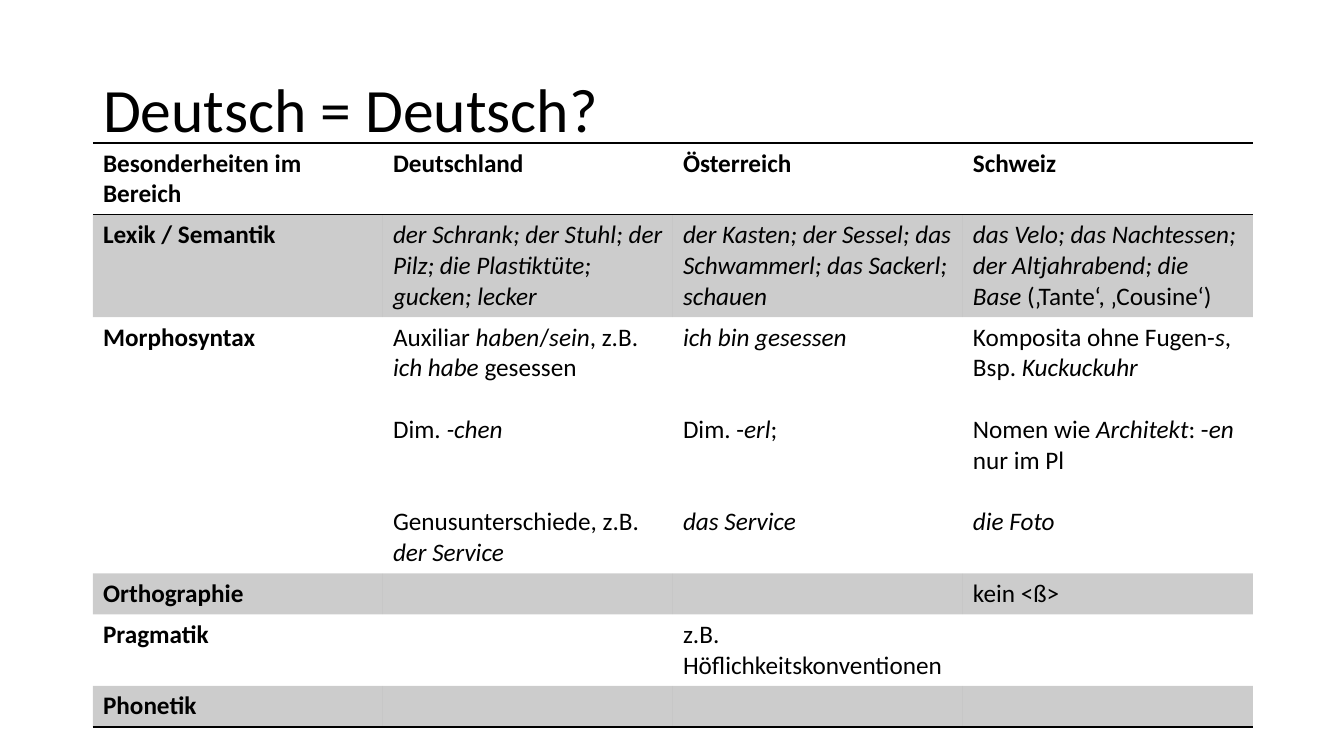
import pptx
import pptx.dml.color
import pptx.enum.text
import pptx.util
from lxml import etree

TITLE = "Deutsch = Deutsch?"
# Text between asterisks is italic. A cell with several paragraphs is a list
# of (lines left free above, text).
ROWS = [
    ["Besonderheiten im Bereich", "Deutschland", "Österreich", "Schweiz"],
    ["Lexik / Semantik",
     "*der Schrank; der Stuhl; der Pilz; die Plastiktüte; gucken; lecker*",
     "*der Kasten; der Sessel; das Schwammerl; das Sackerl; schauen*",
     "*das Velo; das Nachtessen; der Altjahrabend; die Base *(‚Tante‘, ‚Cousine‘)"],
    ["Morphosyntax",
     [(0, "Auxiliar *haben*/*sein*, z.B. *ich habe *gesessen"),
      (1, "Dim. *-chen*"),
      (2, "Genusunterschiede, z.B. *der Service*")],
     [(0, "*ich bin gesessen*"), (2, "Dim. -*erl*;"), (2, "*das Service*")],
     [(0, "Komposita ohne Fugen-*s*, Bsp. *Kuckuckuhr*"),
      (1, "Nomen wie *Architekt*: -*en* nur im Pl"),
      (1, "*die Foto*")]],
    ["Orthographie", "", "", "kein <ß>"],
    ["Pragmatik", "", "z.B. Höflichkeitskonventionen", ""],
    ["Phonetik", "", "", ""],
]
FONT, BLACK = "Calibri", "000000"
SIZE, LINE = 18, 22  # points
LEFT, TOP, COL, ROW = 93, 143, 290, 41  # px; rows grow with their text
NO_GRID = "{2D5ABB26-0587-4C30-8999-92F81FD0307C}"


def px(n):
    return pptx.util.Emu(round(n * 914400 / 100.8))


def style(run, size, bold=False, slant=False):
    font = run.font
    font.name, font.size = FONT, pptx.util.Pt(size)
    font.bold, font.italic = bold, slant
    font.color.rgb = pptx.dml.color.RGBColor.from_string(BLACK)


def write(cell, text, bold):
    parts = text if isinstance(text, list) else [(0, text)]
    frame = cell.text_frame
    for i, (gap, line) in enumerate(parts):
        para = frame.add_paragraph() if i else frame.paragraphs[0]
        para.font.size = pptx.util.Pt(SIZE)
        para.space_before = pptx.util.Pt(gap * LINE)
        for j, piece in enumerate(line.split("*")):
            if piece:
                run = para.add_run()
                run.text = piece
                style(run, SIZE, bold, j % 2 == 1)


def rule(cell, side):
    """Draw a 1 pt border on the top ("T") or bottom ("B") of a cell."""
    props = cell._tc.get_or_add_tcPr()
    props.append(etree.fromstring(
        f'<a:ln{side} xmlns:a="http://schemas.openxmlformats.org/drawingml/2006/main"'
        f' w="12700"><a:solidFill><a:srgbClr val="{BLACK}"/></a:solidFill></a:ln{side}>'))


def shade(cell):
    """Fill a cell with black at 20 % opacity."""
    cell.fill.solid()
    cell.fill.fore_color.rgb = pptx.dml.color.RGBColor.from_string(BLACK)
    tone = cell._tc.tcPr.find(".//{*}solidFill/{*}srgbClr[last()]")
    tone = cell._tc.tcPr.findall("{*}solidFill/{*}srgbClr")[0]
    etree.SubElement(tone, tone.tag.replace("srgbClr", "alpha"), val="20000")


def main():
    deck = pptx.Presentation()
    deck.slide_width, deck.slide_height = px(1344), px(756)
    slide = deck.slides.add_slide(deck.slide_layouts[5])

    title = slide.shapes.title
    title.left, title.top, title.width, title.height = px(LEFT), px(40), px(4 * COL), px(146)
    frame = title.text_frame
    frame.text = TITLE
    frame.auto_size = pptx.enum.text.MSO_AUTO_SIZE.NONE
    frame.vertical_anchor = pptx.enum.text.MSO_ANCHOR.MIDDLE
    para = frame.paragraphs[0]
    para.alignment = pptx.enum.text.PP_ALIGN.LEFT
    para.line_spacing = 0.9
    style(para.runs[0], 44)

    last = len(ROWS) - 1
    table = slide.shapes.add_table(
        len(ROWS), 4, px(LEFT), px(TOP), px(4 * COL), px(len(ROWS) * ROW)).table
    table.first_row = table.horz_banding = False
    table._tbl.tblPr.find("{*}tableStyleId").text = NO_GRID
    for r, row in enumerate(ROWS):
        for c, text in enumerate(row):
            cell = table.cell(r, c)
            write(cell, text, r == 0 or c == 0)
            if r == 0:
                rule(cell, "T")
            if r in (0, last):
                rule(cell, "B")
            if r % 2:
                shade(cell)
    deck.save("out.pptx")


if __name__ == "__main__":
    main()
